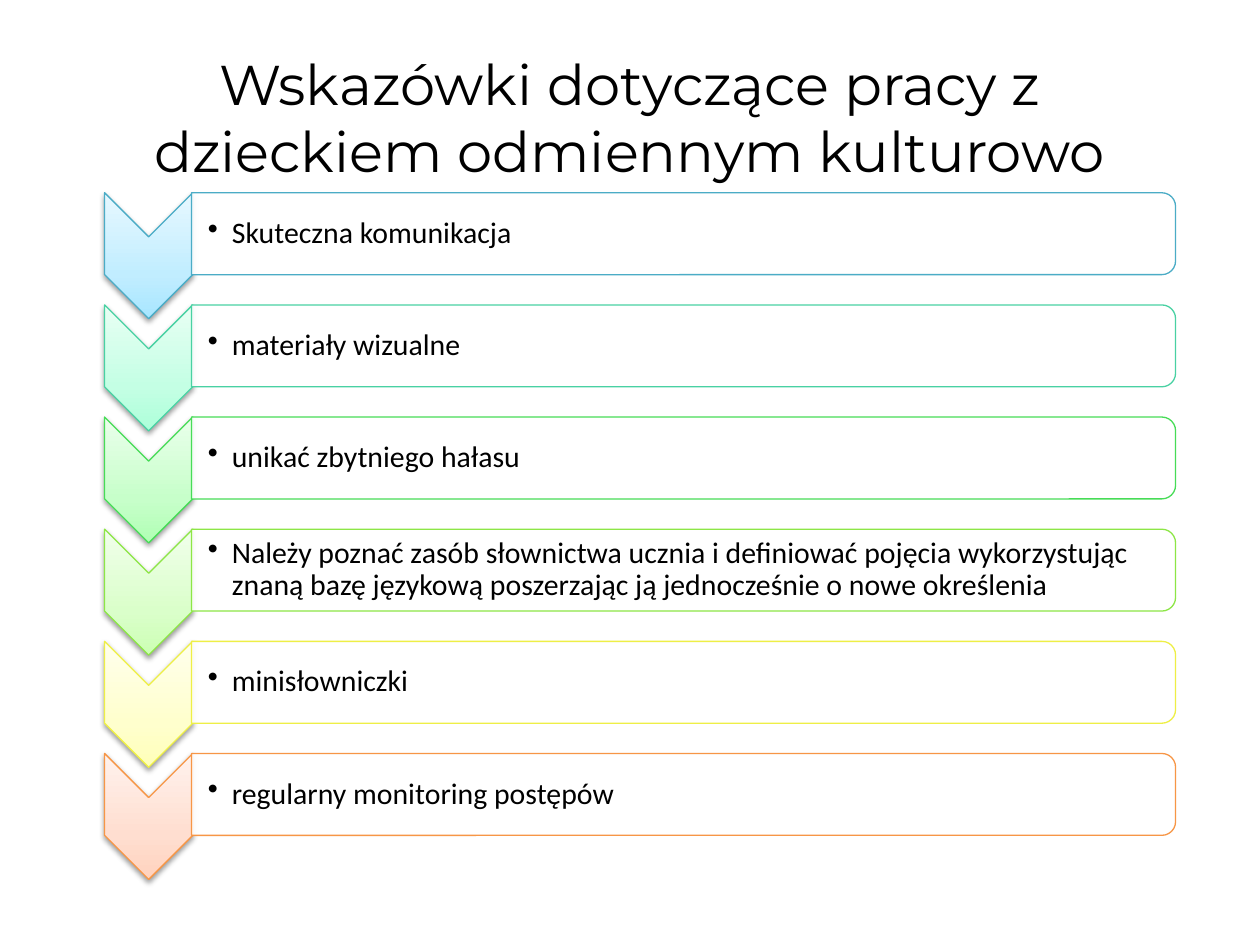
from copy import deepcopy
from lxml.etree import SubElement as Sub
from pptx import Presentation
from pptx.dml.color import RGBColor as RGB
from pptx.enum.shapes import MSO_SHAPE as SHAPE
from pptx.enum.text import MSO_ANCHOR as ANCHOR, PP_ALIGN as ALIGN
from pptx.oxml.ns import qn
from pptx.util import Inches, Pt

# Content: text, line colour name, gradient name
TITLE = "Wskazówki dotyczące pracy z dzieckiem odmiennym kulturowo"
TIPS = [
    ("Skuteczna komunikacja", "blue"),
    ("materiały wizualne", "teal"),
    ("unikać zbytniego hałasu", "green"),
    ("Należy poznać zasób słownictwa ucznia i definiować pojęcia wykorzystując "
     "znaną bazę językową poszerzając ją jednocześnie o nowe określenia", "lime"),
    ("minisłowniczki", "yellow"),
    ("regularny monitoring postępów", "orange"),
]
COLORS = {"text": "000000", "bar": "FFFFFF", "blue": "4BACC6", "teal": "49D1A3",
          "green": "47DC57", "lime": "8DE646", "yellow": "EEEF46", "orange": "F79646"}
FADES = {
    "blue": ("A7E6FF", "C1EDFF", "E7F8FF"),
    "teal": ("ACFFD9", "C4FFE4", "E8FFF4"),
    "green": ("B0FFB4", "C7FFCA", "EAFFEB"),
    "lime": ("CCFFB4", "DAFFCA", "F1FFEB"),
    "yellow": ("FFFFB9", "FFFFCD", "FFFFEC"),
    "orange": ("FFD2BD", "FFDED0", "FFF2ED"),
}
STOPS = (0, 0.35, 1)
TOP, STEP = 1.53, 0.89
LEFT, BAR_W, BAR_H = 1.52, 7.81, 0.65
TIP_W, TIP_H = 1, 0.7

prs = Presentation()
prs.slide_width, prs.slide_height = Inches(10), Inches(7.5)
slide = prs.slides.add_slide(prs.slide_layouts[6])


def color(name):
    return RGB.from_string(COLORS[name])


def turned(kind, mid_x, mid_y, wide, high, line):
    """Add a shape turned by 90 degrees about its centre."""
    shape = slide.shapes.add_shape(kind, Inches(mid_x - wide / 2), Inches(mid_y - high / 2),
                                   Inches(wide), Inches(high))
    shape.rotation = 90
    shape.shadow.inherit = False
    shape.line.color.rgb = color(line)
    shape.line.width = Pt(0.75)
    return shape


def fade(shape, tones):
    shape.fill.gradient()
    shape.fill.gradient_angle = 90
    grad = shape._element.spPr.find(qn("a:gradFill"))
    grad.set("rotWithShape", "0")
    stops = grad.find(qn("a:gsLst"))
    stops.append(deepcopy(stops[0]))
    for stop, place, tone in zip(shape.fill.gradient_stops, STOPS, tones):
        stop.position = place
        stop.color.rgb = RGB.from_string(tone)


def shade(shape):
    effects = shape._element.spPr.find(qn("a:effectLst"))
    glow = Sub(effects, qn("a:outerShdw"), blurRad="40000", dist="20000",
               dir="5400000", rotWithShape="0")
    tone = Sub(glow, qn("a:srgbClr"), val=COLORS["text"])
    Sub(tone, qn("a:alpha"), val="38000")


def write(text, left, top, wide, high, font, size):
    box = slide.shapes.add_textbox(Inches(left), Inches(top), Inches(wide), Inches(high))
    frame = box.text_frame
    frame.word_wrap = True
    frame.vertical_anchor = ANCHOR.MIDDLE
    frame.text = text
    par = frame.paragraphs[0]
    run = par.runs[0].font
    run.name, run.size, run.color.rgb = font, Pt(size), color("text")
    return frame, par


# Title
_, head = write(TITLE, 0.5, 0.3, 9, 1.25, "Montserrat", 32)
head.alignment = ALIGN.CENTER

# Rows: chevron, bar and bulleted text
for row, (text, hue) in enumerate(TIPS):
    top = TOP + row * STEP
    mid = top + BAR_H / 2
    arrow = turned(SHAPE.CHEVRON, LEFT - TIP_H / 2 + 0.01, top + TIP_W / 2, TIP_W, TIP_H, hue)
    fade(arrow, FADES[hue])
    shade(arrow)

    bar = turned(SHAPE.ROUND_2_SAME_RECTANGLE, LEFT + BAR_W / 2, mid, BAR_H, BAR_W, hue)
    bar.fill.solid()
    bar.fill.fore_color.rgb = color("bar")
    Sub(bar._element.spPr.find(qn("a:solidFill"))[0], qn("a:alpha"), val="90000")

    frame, par = write(text, LEFT, mid - 0.29, 7.78, 0.58, "Calibri", 17)
    frame.margin_left = Inches(0.13)
    frame.margin_top = frame.margin_right = frame.margin_bottom = Inches(0.01)
    par.line_spacing = 0.9
    props = par._p.get_or_add_pPr()
    props.set("marL", str(Inches(0.19)))
    props.set("indent", str(-Inches(0.19)))
    Sub(props, qn("a:buChar"), char="•")

prs.save("out.pptx")
